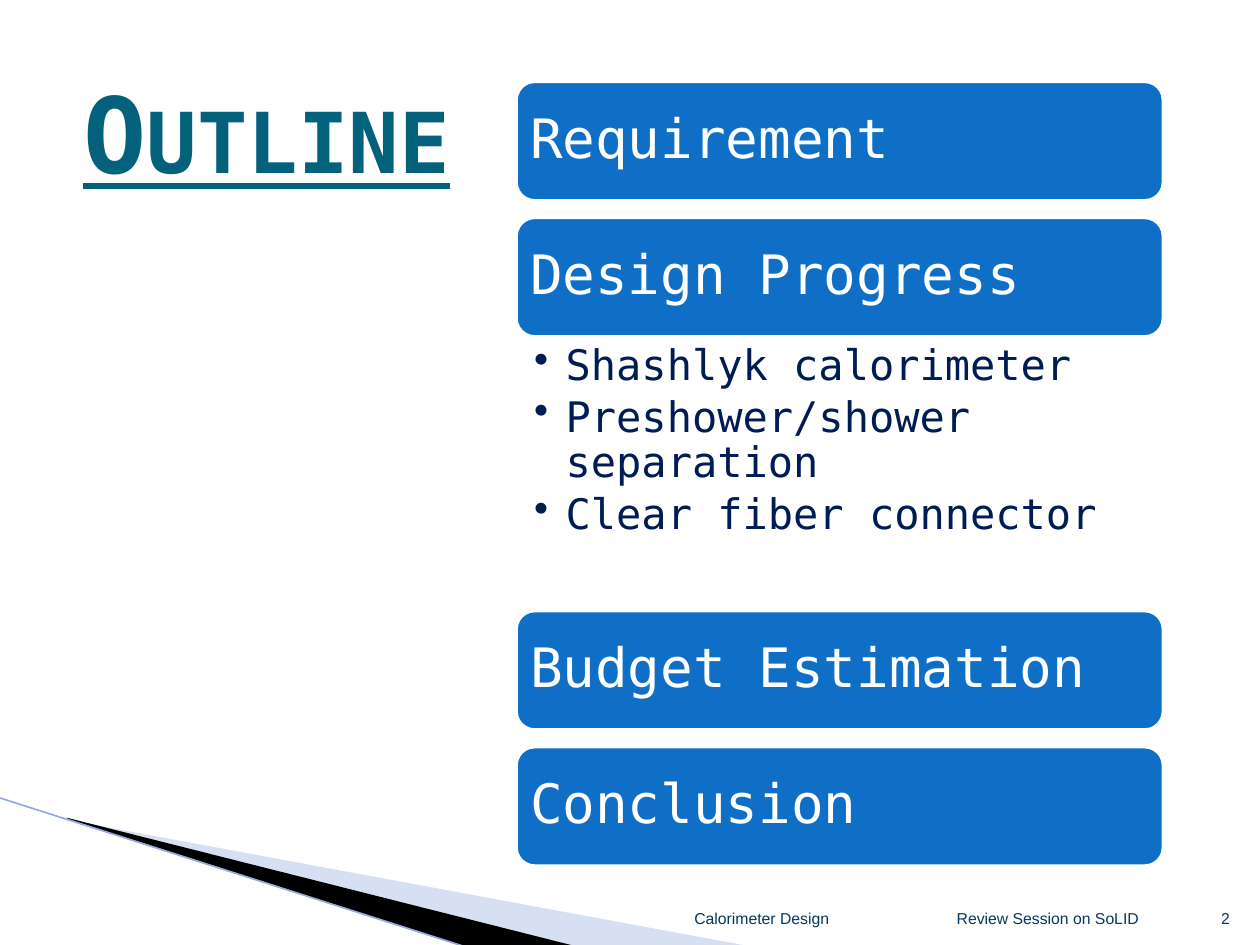
import pptx
import pptx.dml.color
import pptx.enum.shapes
import pptx.enum.text
import pptx.oxml.ns
import pptx.util
import lxml.etree

WIDTH, HEIGHT = pptx.util.Inches(10), pptx.util.Inches(7.5)
COLS, ROWS = 100, 75
MONO, SANS = "DejaVu Sans Mono", "Arial"
HUES = {
    "bar": "0F6FC6", "white": "FFFFFF", "black": "000000",
    "title": "04617B", "item": "001C54", "foot": "083763",
    "wedge": "9DB2E1", "edge": "94ABDC",
}
ALIGN = pptx.enum.text.PP_ALIGN
ANCHOR = pptx.enum.text.MSO_ANCHOR
LEFT, SPAN, TALL, STEP = 40.8, 51.7, 9.8, 10.8
TOP, LIST = 6.3, 21.4


def col(n):
    return round(WIDTH * n / COLS)


def row(n):
    return round(HEIGHT * n / ROWS)


def rgb(hue):
    return pptx.dml.color.RGBColor.from_string(HUES[hue])


def child(node, tag, **attrs):
    return lxml.etree.SubElement(node, pptx.oxml.ns.qn(tag), **attrs)


def frame(shape, anchor, pads):
    body = shape.text_frame
    body.word_wrap = True
    body.vertical_anchor = anchor
    body.margin_left, body.margin_top, body.margin_right, body.margin_bottom = (
        pptx.util.Inches(pad) for pad in pads)
    return body


def write(para, text, face, size, hue, align=ALIGN.LEFT):
    para.alignment = align
    run = para.add_run()
    run.text = text
    run.font.name = face
    run.font.size = pptx.util.Pt(size)
    run.font.color.rgb = rgb(hue)
    return run


def label(slide, box, anchor, pads=(0.1, 0.05, 0.1, 0.05)):
    x, y, w, h = box
    shape = slide.shapes.add_textbox(col(x), row(y), col(w), row(h))
    return frame(shape, anchor, pads)


def wedge(slide, points, hue, alpha=None):
    spots = [(col(x), row(y)) for x, y in points]
    path = slide.shapes.build_freeform(*spots[0])
    path.add_line_segments(spots[1:], close=True)
    shape = path.convert_to_shape()
    shape.shadow.inherit = False
    shape.fill.solid()
    shape.fill.fore_color.rgb = rgb(hue)
    shape.line.fill.background()
    if alpha:
        tint = shape.fill._xPr.find(".//" + pptx.oxml.ns.qn("a:srgbClr"))
        child(tint, "a:alpha", val=str(alpha * 1000))


def edge(slide, start, end):
    line = slide.shapes.add_connector(
        pptx.enum.shapes.MSO_CONNECTOR.STRAIGHT,
        col(start[0]), row(start[1]), col(end[0]), row(end[1]))
    line.line.color.rgb = rgb("edge")
    line.line.width = pptx.util.Pt(0.95)
    child(line._element.spPr, "a:effectLst")


def bar(slide, y, text):
    shape = slide.shapes.add_shape(
        pptx.enum.shapes.MSO_SHAPE.ROUNDED_RECTANGLE,
        col(LEFT), row(y), col(SPAN), row(TALL))
    shape.shadow.inherit = False
    shape.fill.solid()
    shape.fill.fore_color.rgb = rgb("bar")
    shape.line.color.rgb = rgb("white")
    shape.line.width = pptx.util.Pt(4.33)
    para = frame(shape, ANCHOR.MIDDLE, [0.08] * 4).paragraphs[0]
    para.line_spacing = 0.9
    write(para, text, MONO, 31, "white")


def items(slide, y, texts):
    body = label(slide, (LEFT, y, SPAN, LIST), ANCHOR.TOP, (0.16, 0.04, 0.24, 0.04))
    hang = pptx.util.Inches(0.25)
    for i, text in enumerate(texts):
        para = body.add_paragraph() if i else body.paragraphs[0]
        props = para._p.get_or_add_pPr()
        props.set("marL", str(hang))
        props.set("indent", str(-hang))
        child(props, "a:buChar", char="•")
        para.line_spacing = 0.9
        para.space_after = pptx.util.Pt(3.7)
        write(para, text, MONO, 24, "item")


def title(slide, text):
    body = label(slide, (-5.3, 4.2, 42, 12.5), ANCHOR.MIDDLE)
    run = write(body.paragraphs[0], text, MONO, 60, "title", ALIGN.RIGHT)
    run.font.bold = True
    run.font.underline = True
    run._r.get_or_add_rPr().set("cap", "small")


def foot(slide, x, w, text, align=ALIGN.CENTER):
    body = label(slide, (x, 70.1, w, 4), ANCHOR.BOTTOM)
    write(body.paragraphs[0], text, SANS, 9, "foot", align)


def main():
    deck = pptx.Presentation()
    deck.slide_width, deck.slide_height = WIDTH, HEIGHT
    slide = deck.slides.add_slide(deck.slide_layouts[6])
    wedge(slide, [(5.5, 65.1), (59.5, 75.1), (45.6, 75.1), (5.5, 65)], "wedge", 40)
    wedge(slide, [(5.3, 64.9), (45.7, 75.1), (37.2, 75.2), (5.4, 65)], "black")
    edge(slide, (-0.1, 63.3), (37.1, 75.2))
    title(slide, "Outline")
    under = TOP + STEP + TALL
    for first, names in (
        (TOP, ("Requirement", "Design Progress")),
        (under + LIST, ("Budget Estimation", "Conclusion")),
    ):
        for i, name in enumerate(names):
            bar(slide, first + i * STEP, name)
    items(slide, under, (
        "Shashlyk calorimeter",
        "Preshower/shower separation",
        "Clear fiber connector",
    ))
    foot(slide, 49.2, 22.5, "Calorimeter Design")
    foot(slide, 71.7, 22.9, "Review Session on SoLID")
    foot(slide, 94.6, 4, "2", ALIGN.RIGHT)
    deck.save("out.pptx")


if __name__ == "__main__":
    main()
